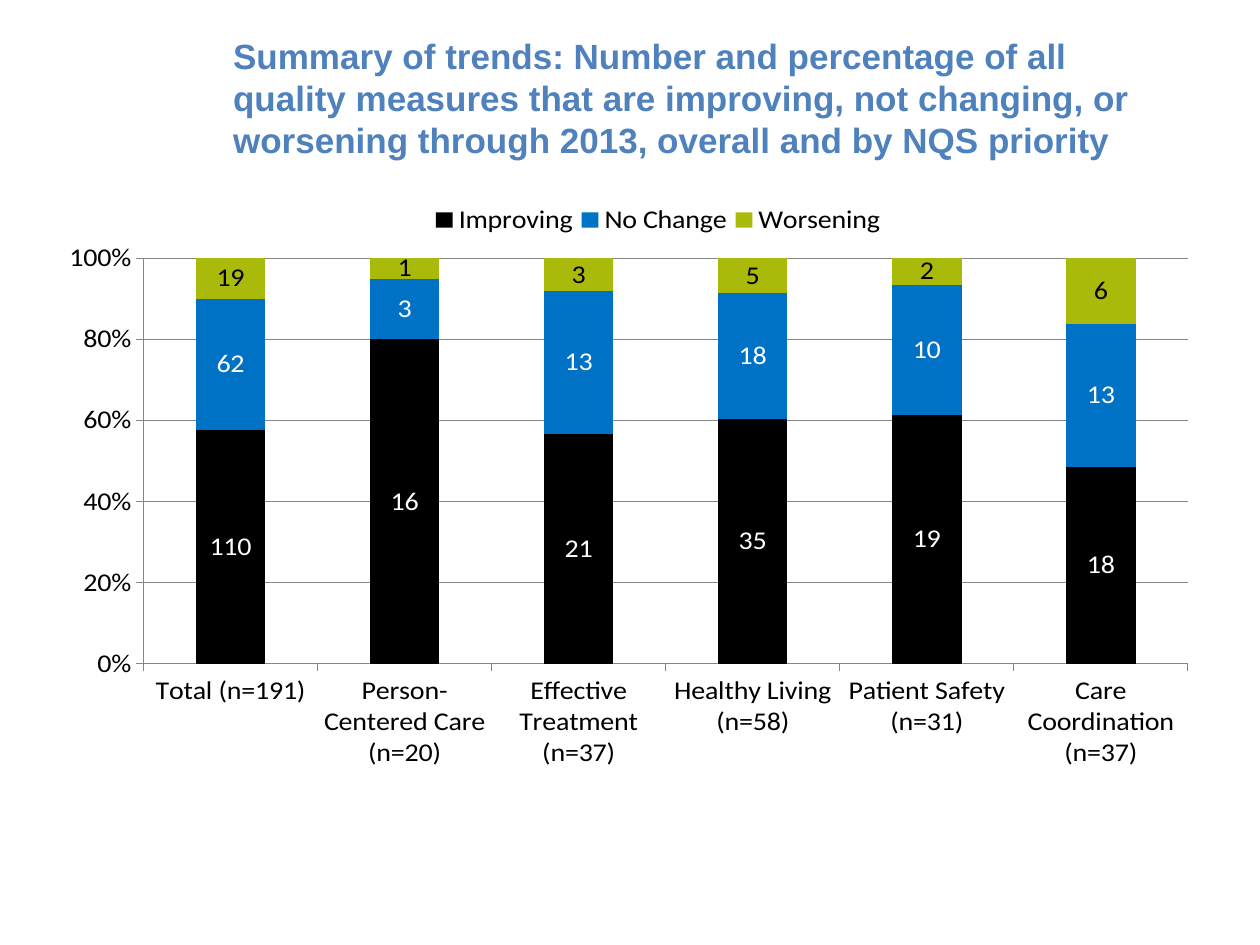
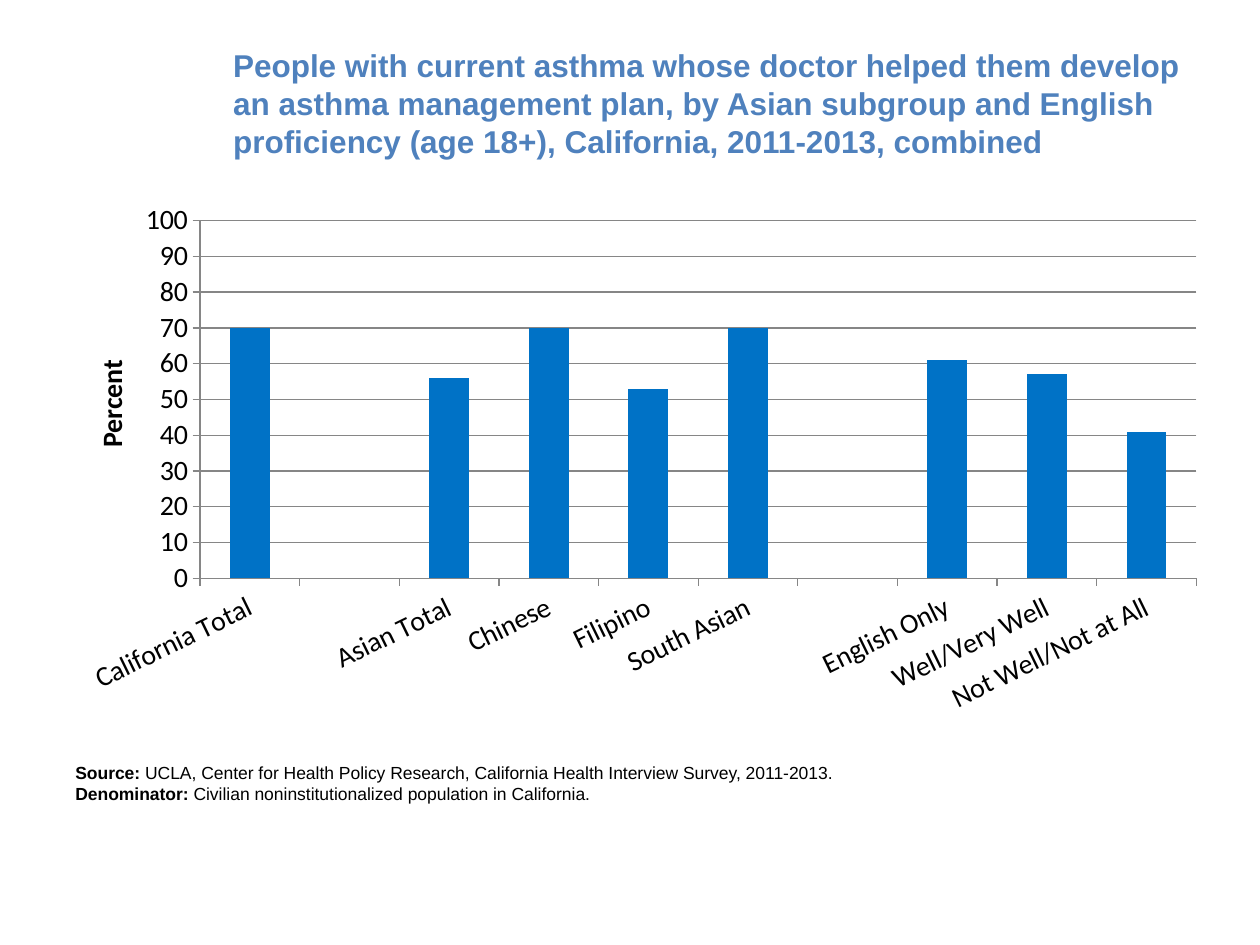
"""Build two slides of quality measure charts."""
from pptx import Presentation
from pptx.chart.data import CategoryChartData
from pptx.dml.color import RGBColor
from pptx.enum.chart import XL_CHART_TYPE, XL_LEGEND_POSITION, XL_TICK_MARK
from pptx.enum.text import MSO_ANCHOR, MSO_AUTO_SIZE, PP_ALIGN
from pptx.oxml import parse_xml
from pptx.oxml.ns import nsdecls
from pptx.util import Pt

STACKED = XL_CHART_TYPE.COLUMN_STACKED_100
COLUMNS = XL_CHART_TYPE.COLUMN_CLUSTERED
TOP = XL_LEGEND_POSITION.TOP
OUT = XL_TICK_MARK.OUTSIDE
MIDDLE = MSO_ANCHOR.MIDDLE
FIXED = MSO_AUTO_SIZE.NONE
GROW = MSO_AUTO_SIZE.SHAPE_TO_FIT_TEXT
LEFT = PP_ALIGN.LEFT

BLACK = RGBColor(0, 0, 0)
WHITE = RGBColor(0xFF, 0xFF, 0xFF)
STEEL = RGBColor(0x4F, 0x81, 0xBD)
BLUE = RGBColor(0x00, 0x72, 0xC6)
GREEN = RGBColor(0xAA, 0xBA, 0x0A)
GRAY = RGBColor(0x86, 0x86, 0x86)

WIDTH = 648
INNER = '<c:layoutTarget val="inner"/>'

SLIDES = [
    {
        "title": "Summary of trends: Number and percentage of all quality measures that are "
                 "improving, not changing, or worsening through 2013, overall and by NQS priority",
        "size": 20, "depth": 68.4, "kind": STACKED, "height": 324,
        "plot": (46, 35.6, 596.8, 253.7),
        "cats": ["Total (n=191)", "Person-Centered Care (n=20)", "Effective Treatment (n=37)",
                 "Healthy Living (n=58)", "Patient Safety (n=31)", "Care Coordination (n=37)"],
        "series": [("Improving", [110, 16, 21, 35, 19, 18], BLACK, WHITE),
                   ("No Change", [62, 3, 13, 18, 10, 13], BLUE, WHITE),
                   ("Worsening", [19, 1, 3, 5, 2, 6], GREEN, BLACK)],
        "scale": {"major_unit": 0.2}, "format": "0%", "turn": 0,
        "legend": (208, 1, 264, 21),
    },
    {
        "title": "People with current asthma whose doctor helped them develop an asthma "
                 "management plan, by Asian subgroup and English proficiency (age 18+), "
                 "California, 2011-2013, combined",
        "size": 18, "depth": 74.16, "kind": COLUMNS, "height": 302.4,
        "plot": (78.4, 10.9, 569.6, 204.4),
        "cats": ["California Total", "", "Asian Total", "Chinese", "Filipino", "South Asian",
                 "", "English Only", "Well/Very Well", "Not Well/Not at All"],
        "series": [("Series 1", [70, None, 56, 70, 53, 70, None, 61, 57, 41], BLUE, None)],
        "scale": {"minimum_scale": 0, "maximum_scale": 100, "major_unit": 10},
        "format": "0", "turn": -26,
        "axis": ("Percent", (14, 87.5)),
        "notes": [("Source: ", "UCLA, Center for Health Policy Research, "
                               "California Health Interview Survey, 2011-2013."),
                  ("Denominator: ", "Civilian noninstitutionalized population in California.")],
    },
]


def style(font, size, name="Calibri", color=BLACK, bold=False):
    """Format one font."""
    for key, value in {"size": Pt(size), "name": name, "bold": bold}.items():
        setattr(font, key, value)
    font.color.rgb = color


def pin(part, index, box, height, target=""):
    """Fix a chart part at a box given in points."""
    for old in part.xpath("c:layout"):
        part.remove(old)
    modes = '<c:xMode val="edge"/><c:yMode val="edge"/>'
    sides = "".join(f'<c:{key} val="{value / whole:.4f}"/>' for key, value, whole
                    in zip("xywh", box, (WIDTH, height) * 2))
    part.insert(index, parse_xml(f'<c:layout {nsdecls("c")}><c:manualLayout>{target}{modes}'
                                 f'{sides}</c:manualLayout></c:layout>'))


deck = Presentation()
deck.slide_width, deck.slide_height = Pt(720), Pt(540)

for item in SLIDES:
    slide = deck.slides.add_slide(deck.slide_layouts[5])
    title, height = slide.shapes.title, item["height"]
    for key, value in {"left": 126, "top": 21.6, "width": 558, "height": item["depth"]}.items():
        setattr(title, key, Pt(value))
    frame = title.text_frame
    frame.text = item["title"]
    for key, value in {"vertical_anchor": MIDDLE, "word_wrap": True, "auto_size": FIXED}.items():
        setattr(frame, key, value)
    frame.paragraphs[0].alignment = LEFT
    style(frame.paragraphs[0].runs[0].font, item["size"], "Arial", STEEL, True)

    data = CategoryChartData()
    data.categories = item["cats"]
    for name, values, fill, ink in item["series"]:
        data.add_series(name, values)
    chart = slide.shapes.add_chart(item["kind"], Pt(36), Pt(115.2), Pt(WIDTH),
                                   Pt(height), data).chart
    style(chart.font, 10, "Arial")
    chart.has_title = False
    pin(chart._chartSpace.xpath(".//c:plotArea")[0], 0, item["plot"], height, INNER)
    chart.has_legend = "legend" in item
    if chart.has_legend:
        chart.legend.position = TOP
        chart.legend.include_in_layout = False
        style(chart.legend.font, 16)
        pin(chart.legend._element, 1, item["legend"], height)

    bars = chart.plots[0]
    bars.gap_width = 150
    bars.vary_by_categories = False
    for series, (name, values, fill, ink) in zip(bars.series, item["series"]):
        series.format.fill.solid()
        series.format.fill.fore_color.rgb = fill
        series.invert_if_negative = False
        if ink is not None:
            series.data_labels.show_value = True
            style(series.data_labels.font, 16, color=ink)

    across, up = chart.category_axis, chart.value_axis
    for axis in (across, up):
        axis.major_tick_mark = OUT
        axis.format.line.color.rgb = GRAY
        style(axis.tick_labels.font, 16)
    across._element.xpath("c:txPr/a:bodyPr")[0].set("rot", str(item["turn"] * 60000))
    for key, value in item["scale"].items():
        setattr(up, key, value)
    up.has_major_gridlines = True
    up.major_gridlines.format.line.color.rgb = GRAY
    up.tick_labels.number_format = item["format"]
    up.tick_labels.number_format_is_linked = False
    if "axis" in item:
        text, spot = item["axis"]
        up.axis_title.text_frame.text = text
        style(up.axis_title.text_frame.paragraphs[0].runs[0].font, 16, bold=True)
        pin(up.axis_title._element, 1, spot, height)

    if "notes" in item:
        frame = slide.shapes.add_textbox(Pt(36), Pt(432), Pt(WIDTH), Pt(31.68)).text_frame
        frame.word_wrap = True
        frame.auto_size = GROW
        for row, parts in enumerate(item["notes"]):
            line = frame.add_paragraph() if row else frame.paragraphs[0]
            for text, bold in zip(parts, (True, False)):
                run = line.add_run()
                run.text = text
                style(run.font, 10, "Arial", bold=bold)

deck.save("out.pptx")
